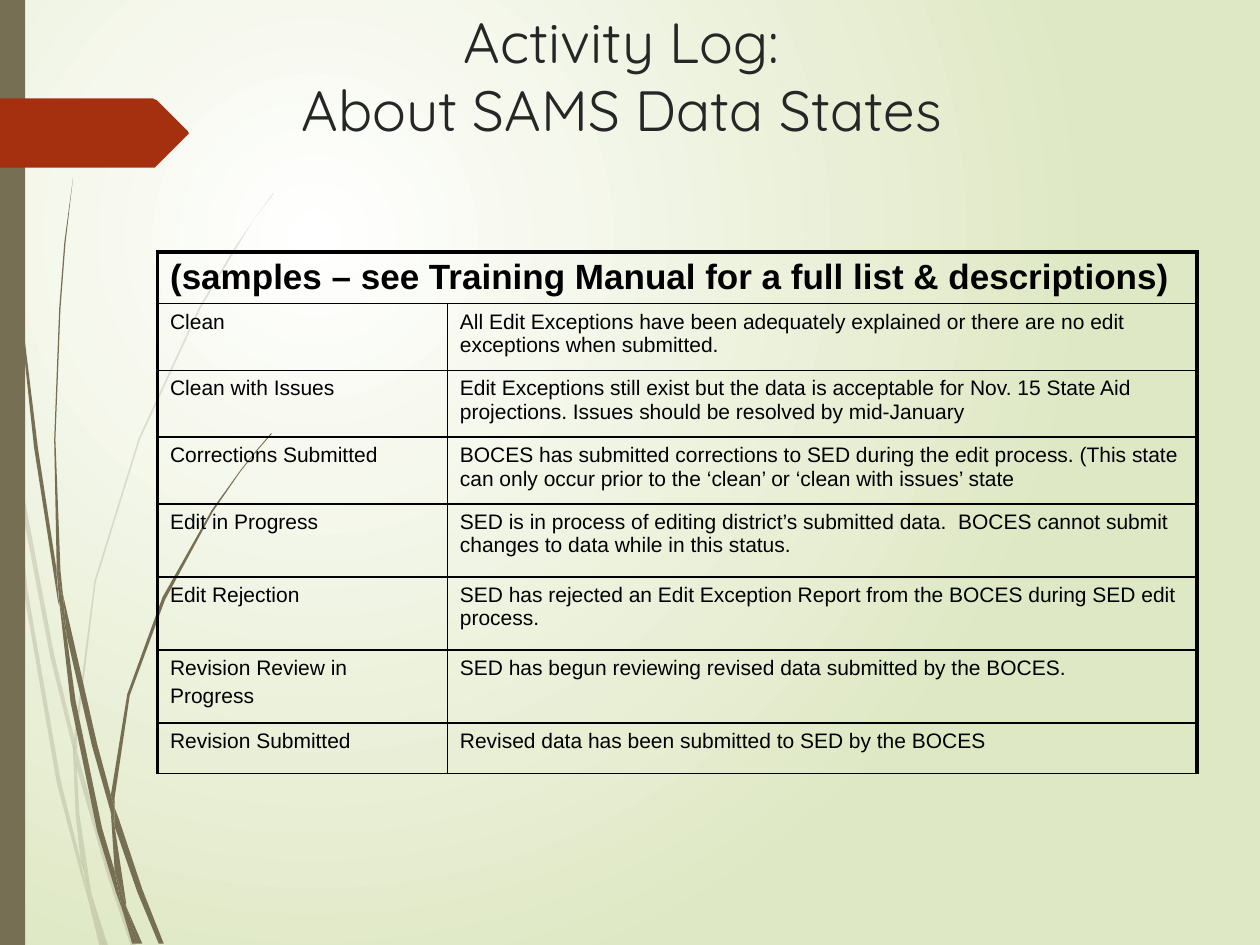
"""Build the Activity Log slide about SAMS data states."""
from lxml.etree import SubElement
from pptx import Presentation
from pptx.dml.color import RGBColor
from pptx.enum.shapes import MSO_SHAPE
from pptx.enum.text import MSO_ANCHOR, MSO_AUTO_SIZE, PP_ALIGN
from pptx.oxml import parse_xml
from pptx.oxml.ns import nsdecls, qn
from pptx.util import Pt

PIXEL = 9144
COLORS = {"white": "FFFFFF", "sage": "DFE8C4", "olive": "766F54",
          "rust": "A53010", "title": "262626", "black": "000000"}

PALE_WISPS = [
    [(8, 350), (6, 322), (0, 282), (0, 299), (7, 344)],
    [(40, 522), (59, 599), (59, 586), (43, 520), (10, 345), (12, 376)],
    [(64, 607), (61, 596), (61, 610), (85, 694), (104, 751), (108, 751), (88, 692)],
    [(83, 751), (86, 751), (73, 711)],
    [(64, 683), (48, 619), (22, 469), (12, 376), (8, 350), (19, 470), (45, 621),
     (64, 693), (70, 714), (69, 707)],
    [(58, 599), (60, 646), (64, 683), (67, 692), (73, 711), (72, 706), (63, 646),
     (61, 610), (61, 608)],
    [(61, 584), (76, 462), (111, 349), (159, 245), (187, 198), (201, 175), (217, 154),
     (217, 153), (201, 175), (186, 197), (158, 244), (110, 348), (75, 461), (59, 584),
     (59, 586), (61, 596)],
    [(70, 714), (79, 751), (82, 751)],
    [(61, 608), (61, 610), (61, 596), (59, 586), (58, 599)],
    [(67, 692), (65, 683), (69, 707), (70, 714), (82, 751), (83, 751), (73, 711)],
]
DARK_WISPS = [
    [(5, 110), (14, 233), (27, 355), (46, 477), (47, 481), (45, 457), (45, 453),
     (30, 355), (15, 232), (6, 109), (4, 48), (3, 0), (2, 0), (3, 48)],
    [(73, 592), (88, 645), (88, 633), (88, 631), (77, 590), (50, 472), (53, 505)],
    [(94, 649), (91, 641), (91, 656), (109, 708), (126, 749), (130, 749), (113, 706)],
    [(91, 691), (81, 657), (60, 556), (53, 505), (47, 477), (56, 557), (77, 659),
     (92, 708), (97, 722), (96, 717)],
    [(50, 472), (48, 453), (44, 349), (48, 245), (52, 193), (58, 141), (51, 193),
     (47, 245), (43, 349), (45, 449), (49, 472)],
    [(110, 749), (113, 749), (100, 719)],
    [(47, 477), (53, 505), (50, 472), (49, 472), (45, 449), (45, 453)],
    [(91, 633), (103, 552), (131, 476), (169, 406), (191, 374), (203, 359), (216, 344),
     (215, 344), (203, 358), (191, 373), (168, 405), (129, 474), (101, 551), (88, 631),
     (91, 641)],
    [(97, 722), (105, 749), (108, 749)],
    [(88, 645), (91, 691), (96, 706), (100, 719), (100, 716), (91, 656), (90, 651)],
    [(88, 645), (90, 651), (91, 656), (91, 641), (88, 631), (88, 633)],
    [(96, 706), (91, 691), (96, 717), (97, 722), (108, 749), (110, 749), (100, 719)],
]
TAG = [(149, 107), (124, 132), (123, 133), (121, 133), (0, 133), (0, 78), (121, 78),
       (123, 79), (124, 79), (149, 104), (150, 106)]
STATES = [
    ("(samples – see Training Manual for a full list & descriptions)", ""),
    ("Clean", "All Edit Exceptions have been adequately explained or there are no edit "
     "exceptions when submitted."),
    ("Clean with Issues", "Edit Exceptions still exist but the data is acceptable for "
     "Nov. 15 State Aid projections. Issues should be resolved by mid-January"),
    ("Corrections Submitted", "BOCES has submitted corrections to SED during the edit "
     "process. (This state can only occur prior to the ‘clean’ or ‘clean with issues’ state"),
    ("Edit in Progress", "SED is in process of editing district’s submitted data.  BOCES "
     "cannot submit changes to data while in this status."),
    ("Edit Rejection", "SED has rejected an Edit Exception Report from the BOCES during "
     "SED edit process."),
    ("Revision Review in\nProgress",
     "SED has begun reviewing revised data submitted by the BOCES."),
    ("Revision Submitted", "Revised data has been submitted to SED by the BOCES"),
]
COLUMN_WIDTHS = [230, 595]
ROW_HEIGHTS = [40, 53, 53, 53, 58, 58, 58, 40]


def write_text(frame, text, *, size, font="Arial", color="black", bold=False,
               align=PP_ALIGN.LEFT, space_before=0):
    frame.text = text
    for paragraph in frame.paragraphs:
        paragraph.alignment = align
        paragraph.space_before = Pt(space_before)
        for run in paragraph.runs:
            run.font.size = Pt(size)
            run.font.name = font
            run.font.bold = bold
            run.font.color.rgb = RGBColor.from_string(COLORS[color])


class SlideBuilder:
    def __init__(self, slide):
        self.slide = slide

    def background(self, center, edge):
        fill = self.slide.background.fill
        fill.gradient()
        for stop, color in zip(fill.gradient_stops, (center, edge)):
            stop.color.rgb = RGBColor.from_string(COLORS[color])
        linear = self.slide.element.find(".//" + qn("a:lin"))
        linear.getparent().replace(linear, parse_xml(
            f'<a:path {nsdecls("a")} path="circle">'
            '<a:fillToRect l="50000" t="50000" r="100000" b="100000"/></a:path>'))

    def paint(self, shape, color, opacity=100):
        shape.shadow.inherit = False
        shape.fill.solid()
        shape.fill.fore_color.rgb = RGBColor.from_string(COLORS[color])
        shape.line.fill.background()
        if opacity < 100:
            fill_color = shape.element.spPr.find(".//" + qn("a:srgbClr"))
            SubElement(fill_color, qn("a:alpha"), val=str(opacity * 1000))

    def outline(self, points, color, opacity=100, shapes=None):
        shapes = shapes or self.slide.shapes
        builder = shapes.build_freeform(*points[0], scale=PIXEL)
        builder.add_line_segments(points[1:], close=True)
        self.paint(builder.convert_to_shape(), color, opacity)

    def wisps(self, outlines, color, opacity=100):
        group = self.slide.shapes.add_group_shape()
        for points in outlines:
            self.outline(points, color, opacity, group.shapes)

    def bar(self, left, top, width, height, color):
        box = [length * PIXEL for length in (left, top, width, height)]
        self.paint(self.slide.shapes.add_shape(MSO_SHAPE.RECTANGLE, *box), color)

    def title(self, text, left, top, width, height):
        title = self.slide.shapes.title
        title.left, title.top = left * PIXEL, top * PIXEL
        title.width, title.height = width * PIXEL, height * PIXEL
        frame = title.text_frame
        frame.word_wrap = True
        frame.auto_size = MSO_AUTO_SIZE.NONE
        frame.vertical_anchor = MSO_ANCHOR.TOP
        write_text(frame, text, size=32.4, font="Quicksand", color="title",
                   align=PP_ALIGN.CENTER)
        title.element.getparent().append(title.element)

    def border(self, cell, side, width):
        properties = cell._tc.get_or_add_tcPr()
        line = SubElement(properties, qn(f"a:ln{side}"), w=str(Pt(width)))
        fill = SubElement(line, qn("a:solidFill"))
        SubElement(fill, qn("a:srgbClr"), val=COLORS["black"])

    def table(self, rows, left, top, column_widths, row_heights):
        table = self.slide.shapes.add_table(
            len(rows), len(column_widths), left * PIXEL, top * PIXEL,
            sum(column_widths) * PIXEL, sum(row_heights) * PIXEL).table
        table.first_row = table.horz_banding = False
        for column, width in zip(table.columns, column_widths):
            column.width = width * PIXEL
        for row, height in zip(table.rows, row_heights):
            row.height = height * PIXEL
        table.cell(0, 0).merge(table.cell(0, len(column_widths) - 1))
        for row_index, texts in enumerate(rows):
            size = 12 if row_index else 20
            for column_index, text in enumerate(texts):
                cell = table.cell(row_index, column_index)
                last = column_index + cell.span_width == len(column_widths)
                thick = {"L": column_index == 0, "R": last, "T": row_index == 0, "B": False}
                for side, is_thick in thick.items():
                    self.border(cell, side, 2.25 if is_thick else 1)
                cell.fill.background()
                write_text(cell.text_frame, text, size=size, bold=row_index == 0,
                           space_before=size * 0.2)


def main():
    presentation = Presentation()
    presentation.slide_width, presentation.slide_height = 1000 * PIXEL, 750 * PIXEL
    builder = SlideBuilder(presentation.slides.add_slide(presentation.slide_layouts[5]))
    builder.background("white", "sage")
    builder.wisps(PALE_WISPS, "olive", opacity=20)
    builder.wisps(DARK_WISPS, "olive")
    builder.bar(0, 0, 20, 750, "olive")
    builder.outline(TAG, "rust")
    builder.title("Activity Log: \vAbout SAMS Data States ", 12, 0, 975, 150)
    builder.table(STATES, 125, 200, COLUMN_WIDTHS, ROW_HEIGHTS)
    presentation.save("out.pptx")


if __name__ == "__main__":
    main()
